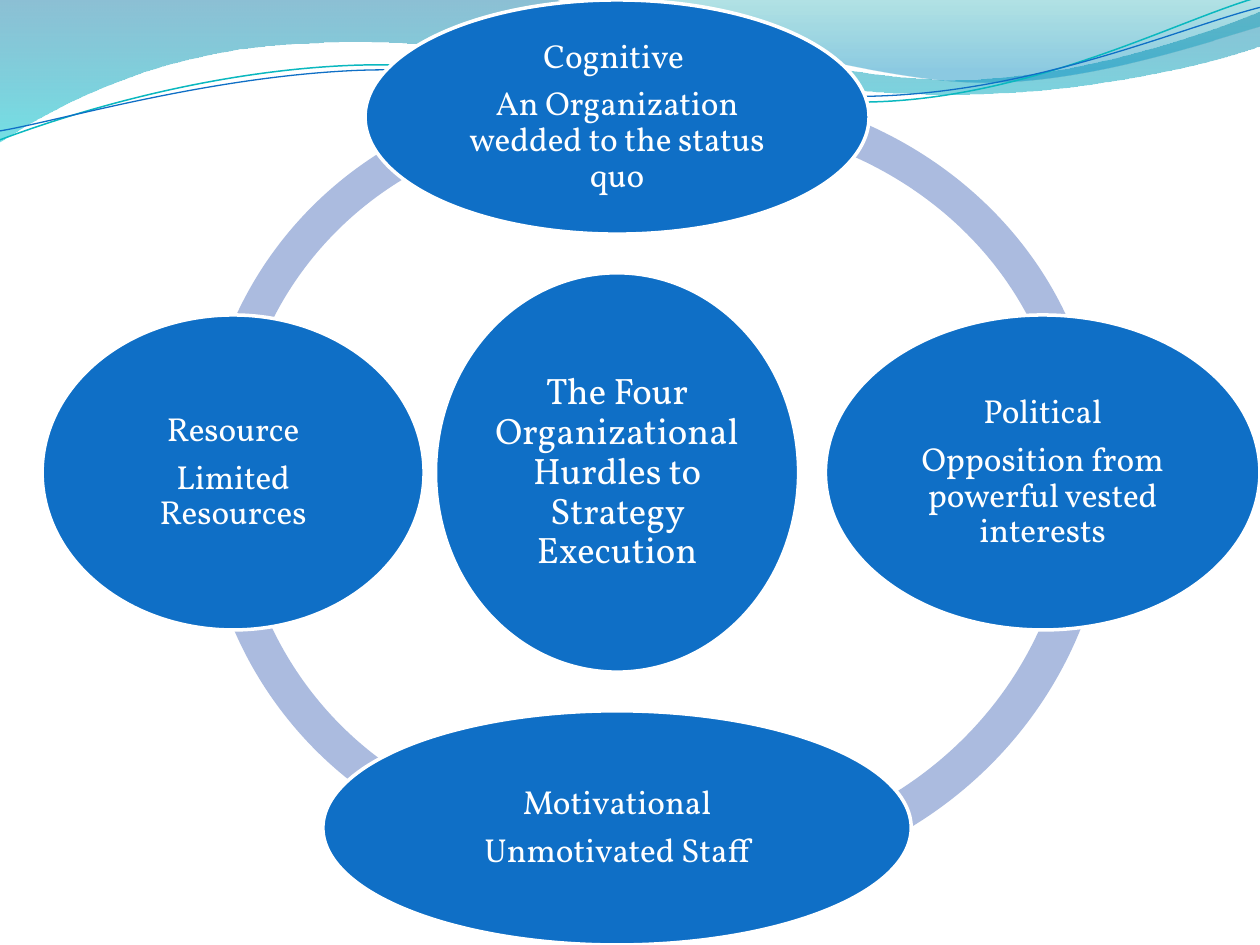
from math import sqrt

from lxml import etree
from pptx import Presentation
from pptx.dml.color import RGBColor
from pptx.enum.shapes import MSO_SHAPE
from pptx.enum.text import MSO_ANCHOR, PP_ALIGN
from pptx.oxml.ns import qn
from pptx.util import Cm, Pt

ELLIPSE, BLOCK_ARC = MSO_SHAPE.OVAL, MSO_SHAPE.BLOCK_ARC
CENTER, MIDDLE = PP_ALIGN.CENTER, MSO_ANCHOR.MIDDLE

WHITE = RGBColor(0xFF, 0xFF, 0xFF)
BLUE = RGBColor(0x0F, 0x6F, 0xC6)
PALE_BLUE = RGBColor(0xAB, 0xBB, 0xDF)
TEAL = RGBColor(0x0A, 0xB8, 0xBF)
DEEP_BLUE = RGBColor(0x00, 0x74, 0xA1)
CYAN = RGBColor(0x00, 0xC6, 0xCF)
DEEP_TEAL = RGBColor(0x00, 0xA1, 0xA9)
SKY_BLUE = RGBColor(0x00, 0x8B, 0xBF)

FONT = "Vollkorn"
RING_THICKNESS = 0.046

# Outlines in cm: a start point, then one point per line or three per Bezier curve.
WAVES = [
    {"start": (0, 0),
     "segments": [
         [(11.18, -0.03)],
         [(12.09, 0.43), (16.87, 1.6), (19.25, 1.6)],
         [(21.67, 1.6), (24.33, 0.66), (25.4, 0.23)],
         [(25.43, 0.91)],
         [(24.97, 1.12), (22.1, 1.93), (18.95, 1.9)],
         [(15.8, 1.9), (9.7, 0.71), (6.53, 0.86)],
         [(3.28, 0.91), (1.17, 2.11), (-0.03, 2.87)]],
     "stops": [(0, DEEP_BLUE, 45), (1, CYAN, 55)]},
    {"start": (12.17, -0.03),
     "segments": [
         [(12.93, 0.28), (17.32, 1.57), (19.53, 1.65)],
         [(21.74, 1.75), (24.41, 0.81), (25.4, 0.53)],
         [(25.4, 0)]],
     "stops": [(0, DEEP_TEAL, 30), (0.8, SKY_BLUE, 45)]},
]
WAVE_LINES = [
    {"start": (0, 2.82),
     "segments": [
         [(1.22, 2.36), (4.01, 1.45), (7.04, 1.32)],
         [(10.03, 1.19), (15.06, 2.26), (18.11, 2.03)],
         [(21.16, 1.8), (23.83, 0.38), (25.35, -0.05)]],
     "color": TEAL, "width": 0.85},
    {"start": (0, 2.64),
     "segments": [
         [(1.19, 2.44), (4.17, 1.55), (7.19, 1.42)],
         [(10.24, 1.3), (15.16, 2.13), (18.21, 1.91)],
         [(21.23, 1.7), (23.9, 0.53), (25.4, 0.15)]],
     "color": BLUE, "width": 0.75},
]
# Box in cm, then start and end angle in degrees.
RING_ARCS = [
    ((4.07, 1.88, 15.54, 15.24), 179.81, 274.67),
    ((4.07, 1.73, 15.54, 15.67), 85.34, 180.19),
    ((5.33, 1.42, 17.04, 16.51), 358.85, 101.53),
    ((5.56, 1.75, 16.61, 15.24), 258.48, 1.16),
]
# Box in cm, text size, paragraphs.
HURDLES = [
    ((8.78, 5.5, 7.32, 8.05), 21,
     ["The Four Organizational Hurdles to Strategy Execution"]),
    ((7.36, 0, 10.16, 4.72), 19,
     ["Cognitive ", "An Organization wedded to the status quo"]),
    ((16.64, 6.35, 8.76, 6.35), 19,
     ["Political", "Opposition from powerful vested interests"]),
    ((6.51, 14.33, 11.86, 4.72), 19, ["Motivational", "Unmotivated Staff"]),
    ((0.85, 6.35, 7.7, 6.35), 19, ["Resource", "Limited Resources"]),
]


def set_values(target, values):
    for name, value in values.items():
        setattr(target, name, value)


def add_outline(slide, start, segments, closed):
    """Draw a freeform, joining every three-point segment into one curve."""
    points = [(Cm(x), Cm(y)) for x, y in [start, *sum(segments, [])]]
    builder = slide.shapes.build_freeform(*points[0])
    builder.add_line_segments(points[1:], close=closed)
    shape = builder.convert_to_shape()
    shape.shadow.inherit = False
    lines = iter(list(shape._element.spPr.iter(qn("a:lnTo"))))
    for segment in segments:
        first, *others = [next(lines) for _ in segment]
        if others:
            curve = etree.Element(qn("a:cubicBezTo"))
            first.addprevious(curve)
            for line in (first, *others):
                curve.append(line[0])
                line.getparent().remove(line)
    return shape


def add_wave(slide, start, segments, stops):
    shape = add_outline(slide, start, segments, True)
    shape.line.fill.background()
    shape.fill.gradient()
    shape.fill.gradient_angle = 270
    for stop, (position, color, _) in zip(shape.fill.gradient_stops, stops):
        stop.position = position
        stop.color.rgb = color
    color_elements = shape._element.spPr.iter(qn("a:srgbClr"))
    for element, (_, _, opacity) in zip(color_elements, stops):
        etree.SubElement(element, qn("a:alpha"), val=str(opacity * 1000))


def add_wave_line(slide, start, segments, color, width):
    shape = add_outline(slide, start, segments, False)
    shape.fill.background()
    shape.line.color.rgb = color
    shape.line.width = Pt(width)


def add_filled_shape(slide, kind, box, color):
    shape = slide.shapes.add_shape(kind, *map(Cm, box))
    shape.shadow.inherit = False
    shape.fill.solid()
    shape.fill.fore_color.rgb = color
    return shape


def add_ring_arc(slide, box, start_angle, end_angle):
    shape = add_filled_shape(slide, BLOCK_ARC, box, PALE_BLUE)
    shape.line.fill.background()
    # Angles are stored in 60000ths of a degree, adjustments in 100000ths.
    values = (start_angle * 0.6, end_angle * 0.6, RING_THICKNESS)
    for index, value in enumerate(values):
        shape.adjustments[index] = value


def inscribed_box(left, top, width, height):
    """Return the largest rectangle that fits in the ellipse of this box."""
    inner_width, inner_height = width / sqrt(2), height / sqrt(2)
    return (left + (width - inner_width) / 2, top + (height - inner_height) / 2,
            inner_width, inner_height)


def add_hurdle(slide, box, size, texts):
    shape = add_filled_shape(slide, ELLIPSE, box, BLUE)
    shape.line.color.rgb = WHITE
    shape.line.width = Pt(2)
    frame = slide.shapes.add_textbox(*map(Cm, inscribed_box(*box))).text_frame
    sides = ("left", "top", "right", "bottom")
    set_values(frame, {f"margin_{side}": Cm(0.08) for side in sides})
    set_values(frame, {"word_wrap": True, "vertical_anchor": MIDDLE})
    for index, text in enumerate(texts):
        paragraph = frame.add_paragraph() if index else frame.paragraphs[0]
        set_values(paragraph, {"alignment": CENTER, "line_spacing": 0.9,
                               "space_after": Pt(size * 0.35)})
        run = paragraph.add_run()
        run.text = text
        set_values(run.font, {"name": FONT, "size": Pt(size)})
        run.font.color.rgb = WHITE


def main():
    presentation = Presentation()
    set_values(presentation, {"slide_width": Cm(25.4), "slide_height": Cm(19.05)})
    slide = presentation.slides.add_slide(presentation.slide_layouts[6])
    for wave in WAVES:
        add_wave(slide, **wave)
    for wave_line in WAVE_LINES:
        add_wave_line(slide, **wave_line)
    for arc in RING_ARCS:
        add_ring_arc(slide, *arc)
    for hurdle in HURDLES:
        add_hurdle(slide, *hurdle)
    presentation.save("out.pptx")


if __name__ == "__main__":
    main()
